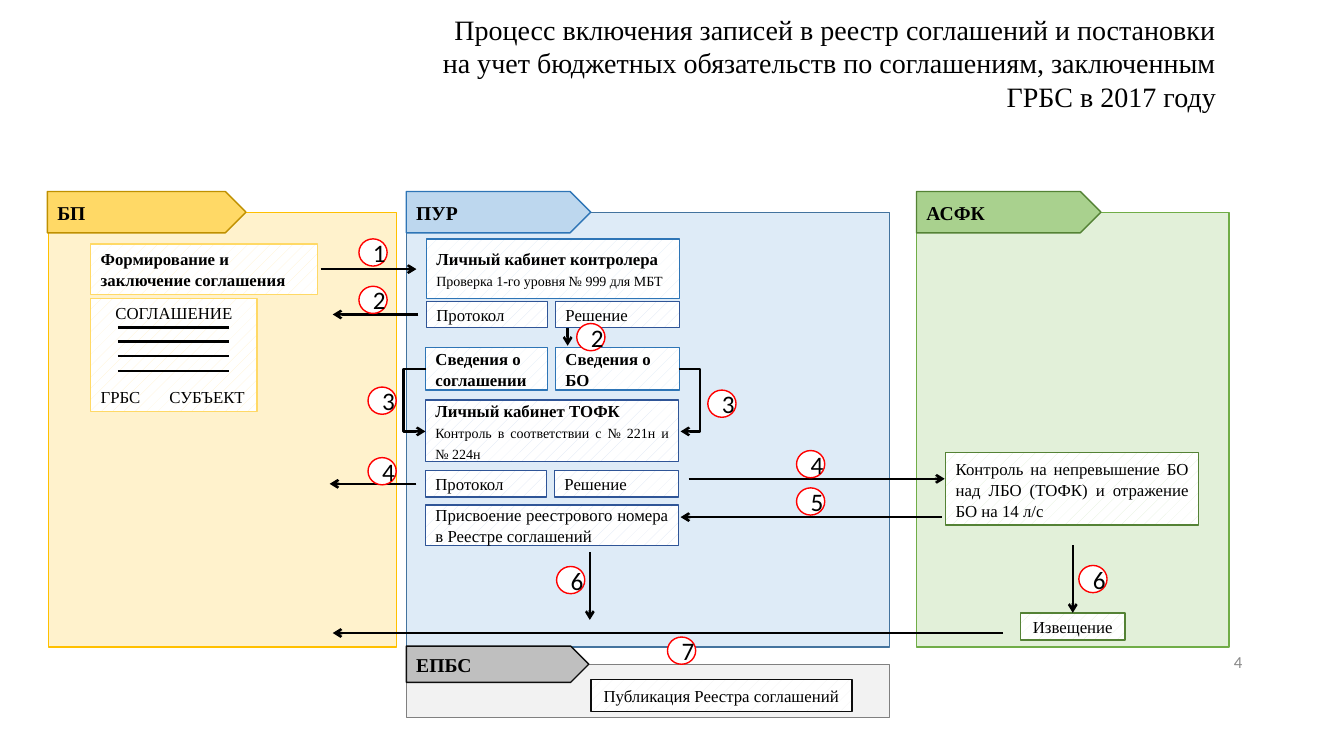
from dataclasses import dataclass

from pptx import Presentation
from pptx.dml.color import RGBColor
from pptx.enum.dml import MSO_PATTERN
from pptx.enum.shapes import MSO_CONNECTOR as LINK, MSO_SHAPE as SHAPE
from pptx.enum.text import MSO_ANCHOR as ANCHOR, MSO_AUTO_SIZE as AUTO_SIZE, PP_ALIGN as ALIGN
from pptx.oxml.ns import qn
from pptx.util import Emu, Pt
from lxml.etree import SubElement

EMU_PER_PX = 9144


@dataclass(frozen=True)
class Theme:
    serif: str = "Times New Roman"
    sans: str = "Calibri"
    ink: str = "000000"
    paper: str = "FFFFFF"
    muted: str = "898989"
    badge: str = "FF0000"
    title_size: int = 20
    badge_size: int = 18
    tag_size: int = 14
    body_size: int = 12
    small_size: int = 10
    leading: int = 15
    outline: float = 1
    arrow: float = 1.75
    yellow: tuple = ("FFF2CC", "FFD966")
    blue: tuple = ("DEEBF7", "2E75B6")
    navy: tuple = ("DAE3F3", "2F5597")
    green: tuple = ("E2F0D9", "548235")
    gray: tuple = ("F2F2F2", "0D0D0D")


THEME = Theme()

PANELS = [
    ((48, 211, 345, 431), "FFF2CC", "FFC000"),
    ((403, 211, 479, 431), "DEEBF7", "43739E"),
    ((909, 211, 310, 431), "E2F0D9", "70AD47"),
    ((403, 659, 479, 53), "F2F2F2", "808080"),
]
TAGS = [
    ("БП", (47, 190, 197, 41), "FFD966", "BF9000"),
    ("ПУР", (403, 190, 183, 41), "BDD7EE", "2E75B6"),
    ("АСФК", (909, 190, 183, 41), "A9D18E", "548235"),
    ("ЕПБС", (403, 641, 181, 36), "BFBFBF", "0D0D0D"),
]
HEADED_BOXES = [
    ((90, 242, 225, 50), THEME.yellow, ALIGN.LEFT, "Формирование и заключение соглашения", ""),
    ((423, 237, 251, 59), THEME.blue, ALIGN.LEFT, "Личный кабинет контролера",
     "Проверка 1-го уровня № 999 для МБТ"),
    ((422, 345, 121, 42), THEME.blue, ALIGN.LEFT, "Сведения о соглашении", ""),
    ((551, 345, 123, 42), THEME.blue, ALIGN.LEFT, "Сведения о БО", ""),
    ((422, 397, 251, 61), THEME.navy, ALIGN.JUSTIFY, "Личный кабинет ТОФК",
     "Контроль в соответствии с № 221н и № 224н"),
]
PLAIN_BOXES = [
    ((938, 449, 251, 72), THEME.green, ALIGN.JUSTIFY,
     "Контроль на непревышение БО над ЛБО (ТОФК) и отражение БО на 14 л/с"),
    ((422, 501, 251, 40), THEME.navy, ALIGN.JUSTIFY,
     "Присвоение реестрового номера в Реестре соглашений"),
    ((586, 674, 259, 32), THEME.gray, ALIGN.CENTER, "Публикация Реестра соглашений"),
    ((423, 299, 120, 26), THEME.navy, ALIGN.JUSTIFY, "Протокол"),
    ((551, 299, 123, 26), THEME.navy, ALIGN.JUSTIFY, "Решение"),
    ((422, 467, 120, 26), THEME.navy, ALIGN.JUSTIFY, "Протокол"),
    ((550, 467, 123, 26), THEME.navy, ALIGN.JUSTIFY, "Решение"),
]
ARROWS = [
    (318, 267, 413, 267), (415, 312, 330, 312), (563, 325, 563, 343),
    (683, 475, 937, 475), (413, 480, 327, 480), (934, 513, 675, 513),
    (585, 548, 585, 615), (995, 628, 330, 628),
]
BENT_ARROWS = [((423, 366, 422, 428), 400), ((673, 366, 675, 428), 694)]
BADGES = [
    (1, 356, 237), (2, 356, 284), (2, 572, 321), (3, 702, 387), (3, 365, 384),
    (4, 365, 454), (4, 790, 447), (5, 790, 484), (6, 1070, 561), (6, 552, 562),
    (7, 662, 632),
]


def px(*lengths):
    return [Emu(length * EMU_PER_PX) for length in lengths]


def rgb(value):
    return RGBColor.from_string(value)


def set_font(para, size, bold=False, face=THEME.serif, color=THEME.ink):
    font = para.font
    font.name, font.size, font.bold = face, Pt(size), bold
    font.color.rgb = rgb(color)


def add_solid(page, kind, frame, fill, line):
    shape = page.shapes.add_shape(kind, *px(*frame))
    shape.shadow.inherit = False
    shape.fill.solid()
    shape.fill.fore_color.rgb = rgb(fill)
    shape.line.color.rgb = rgb(line)
    shape.line.width = Pt(THEME.outline)
    return shape


def add_tag(page, label, frame, fill, line):
    para = add_solid(page, SHAPE.PENTAGON, frame, fill, line).text_frame.paragraphs[0]
    para.text, para.alignment = label, ALIGN.LEFT
    set_font(para, THEME.tag_size, bold=True)


def add_box(page, frame, palette, align, *lines):
    tint, edge = palette
    box = add_solid(page, SHAPE.RECTANGLE, frame, tint, edge)
    box.fill.patterned()
    box.fill.pattern = MSO_PATTERN.PERCENT_10
    box.fill.fore_color.rgb = rgb(tint)
    box.fill.back_color.rgb = rgb(THEME.paper)
    text = box.text_frame
    for index, (words, size, bold) in enumerate(lines):
        para = text.add_paragraph() if index else text.paragraphs[0]
        para.text, para.alignment = words, align
        para.line_spacing = Pt(THEME.leading)
        set_font(para, size, bold)
    return box


def add_line(page, points, arrow=True, kind=LINK.STRAIGHT):
    line = page.shapes.add_connector(kind, *px(*points))
    line.line.color.rgb = rgb(THEME.ink)
    line.line.width = Pt(THEME.arrow)
    if arrow:
        SubElement(line.line._get_or_add_ln(), qn("a:tailEnd"), type="arrow")
    SubElement(line._element.spPr, qn("a:effectLst"))
    return line


def add_bent_arrow(page, points, turn):
    line = add_line(page, points, kind=LINK.ELBOW)
    start, end = points[0], points[2]
    bend = round((turn - start) / (end - start) * 100000)
    guides = line._element.spPr.find(qn("a:prstGeom")).find(qn("a:avLst"))
    SubElement(guides, qn("a:gd"), name="adj1", fmla=f"val {bend}")


def add_badge(page, number, left, top):
    badge = add_solid(page, SHAPE.OVAL, (left, top, 28, 27), THEME.paper, THEME.badge)
    para = badge.text_frame.paragraphs[0]
    para.text, para.alignment = str(number), ALIGN.CENTER
    set_font(para, THEME.badge_size, face=THEME.sans)


def add_agreement(page):
    sheet = add_box(page, (90, 296, 165, 112), THEME.yellow, ALIGN.CENTER,
                    ("СОГЛАШЕНИЕ", THEME.body_size, False),
                    ("ГРБС\tСУБЪЕКТ", THEME.body_size, False))
    parties = sheet.text_frame.paragraphs[1]
    parties.alignment = ALIGN.LEFT
    parties.space_before = Pt(3 * THEME.leading)
    props = parties._p.get_or_add_pPr()
    tabs = props.makeelement(qn("a:tabLst"))
    SubElement(tabs, qn("a:tab"), pos=str(px(143)[0]), algn="r")
    props.find(qn("a:defRPr")).addprevious(tabs)
    for y in (325, 339, 353, 368):
        add_line(page, (117, y, 227, y), arrow=False)


def add_title(page):
    title = page.shapes.title
    title.left, title.top, title.width, title.height = px(415, 7, 801, 111)
    text = title.text_frame
    text.word_wrap = True
    text.auto_size = AUTO_SIZE.NONE
    text.vertical_anchor = ANCHOR.TOP
    para = text.paragraphs[0]
    para.text = ("Процесс включения записей в реестр соглашений и постановки на учет "
                 "бюджетных обязательств по соглашениям, заключенным ГРБС в 2017 году")
    para.alignment = ALIGN.RIGHT
    set_font(para, THEME.title_size)


def add_page_number(page):
    text = page.shapes.add_textbox(*px(942, 637, 300, 40)).text_frame
    text.word_wrap = True
    text.vertical_anchor = ANCHOR.MIDDLE
    para = text.paragraphs[0]
    para.text, para.alignment = "4", ALIGN.RIGHT
    set_font(para, THEME.body_size, face=THEME.sans, color=THEME.muted)


def main():
    deck = Presentation()
    deck.slide_width, deck.slide_height = px(1333, 750)
    page = deck.slides.add_slide(deck.slide_layouts[5])
    add_title(page)
    add_page_number(page)
    for frame, fill, line in PANELS:
        add_solid(page, SHAPE.RECTANGLE, frame, fill, line)
    for tag in TAGS:
        add_tag(page, *tag)
    for frame, palette, align, heading, detail in HEADED_BOXES:
        lines = [(heading, THEME.body_size, True)]
        if detail:
            lines.append((detail, THEME.small_size, False))
        add_box(page, frame, palette, align, *lines)
    for frame, palette, align, words in PLAIN_BOXES:
        add_box(page, frame, palette, align, (words, THEME.body_size, False))
    add_agreement(page)
    notice = add_box(page, (1012, 608, 104, 27), THEME.green, ALIGN.CENTER,
                     ("Извещение", THEME.body_size, False))
    add_line(page, (1064, 541, 1064, 608)).end_connect(notice, 0)
    for points in ARROWS:
        add_line(page, points)
    for points, turn in BENT_ARROWS:
        add_bent_arrow(page, points, turn)
    for badge in BADGES:
        add_badge(page, *badge)
    deck.save("out.pptx")


if __name__ == "__main__":
    main()
